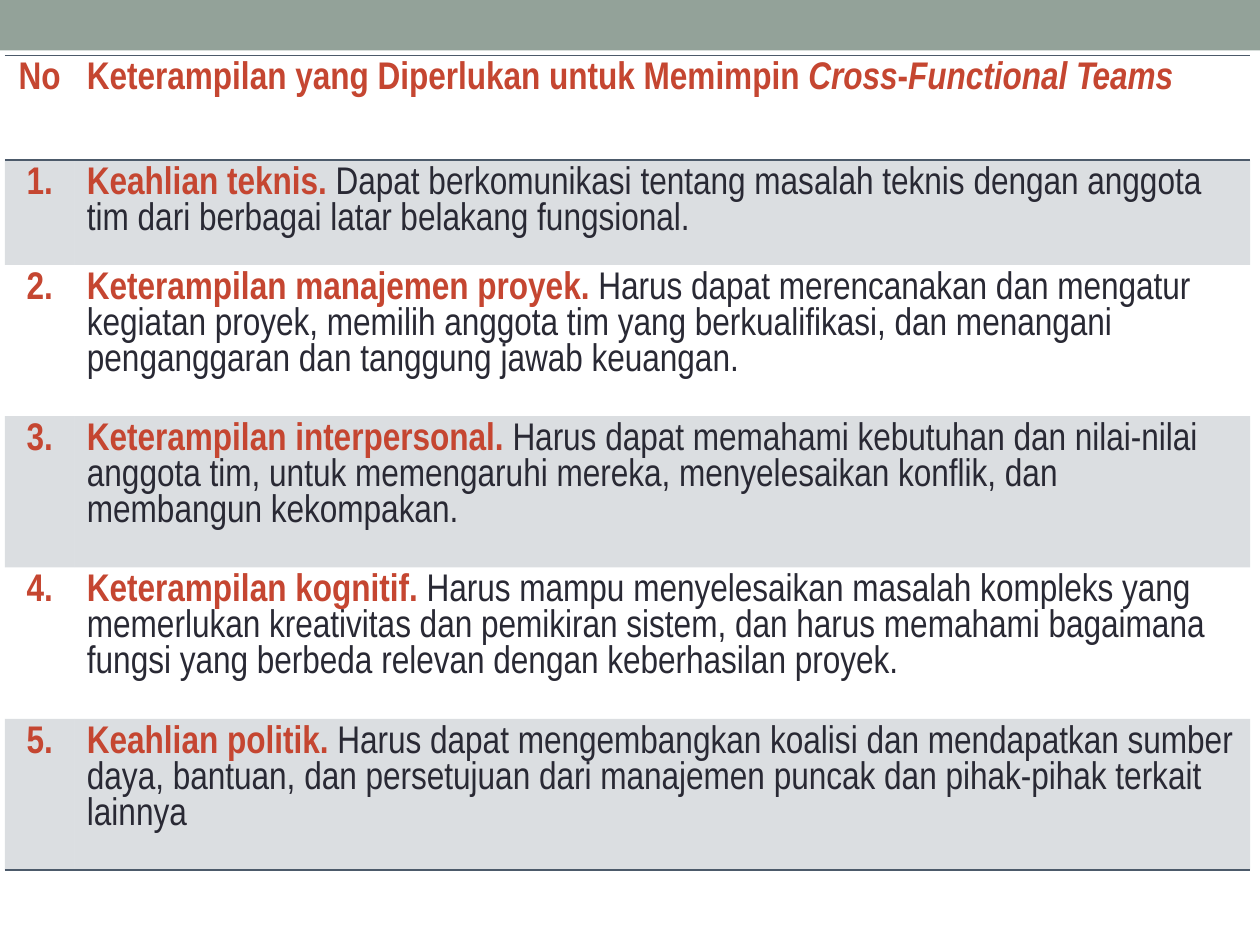
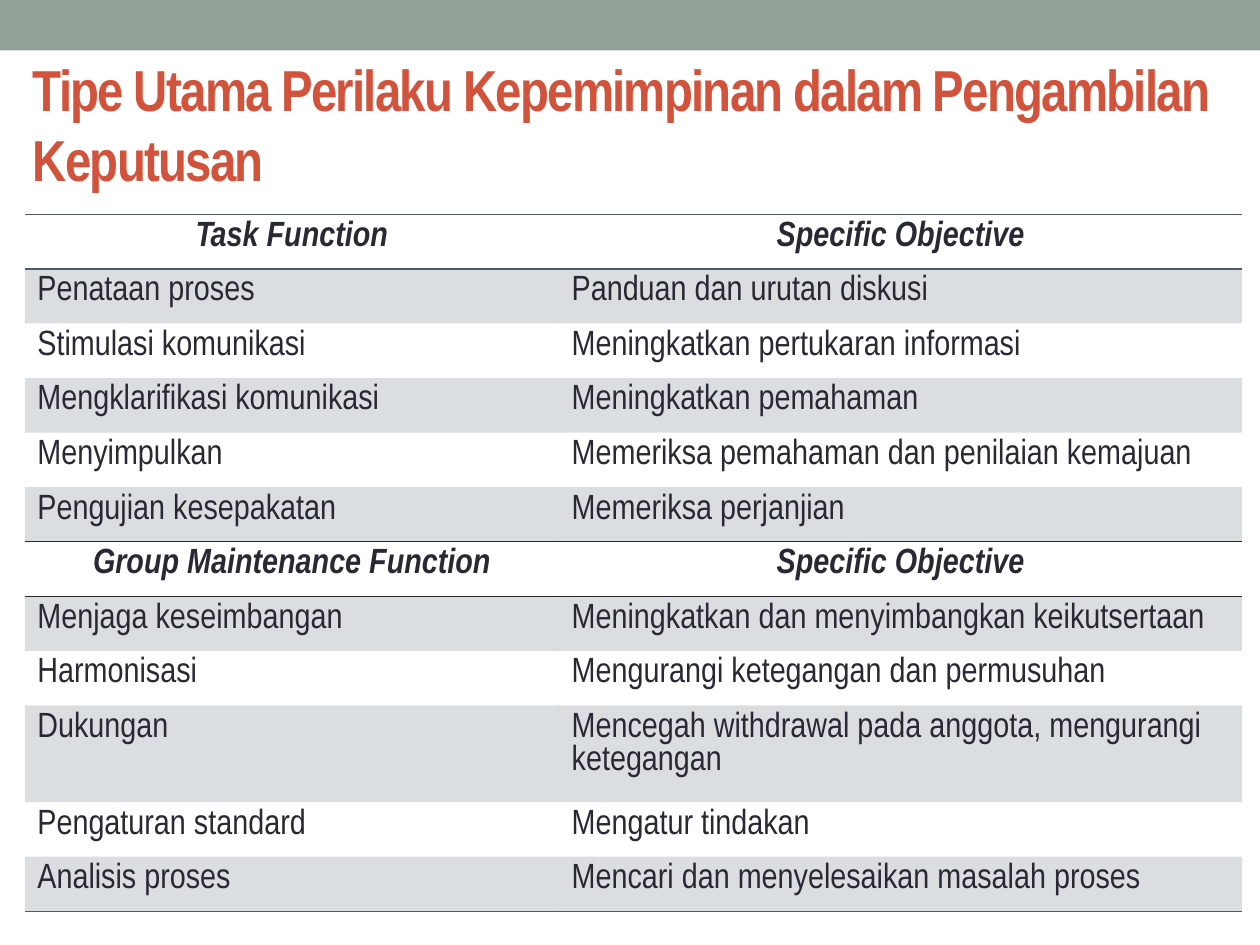
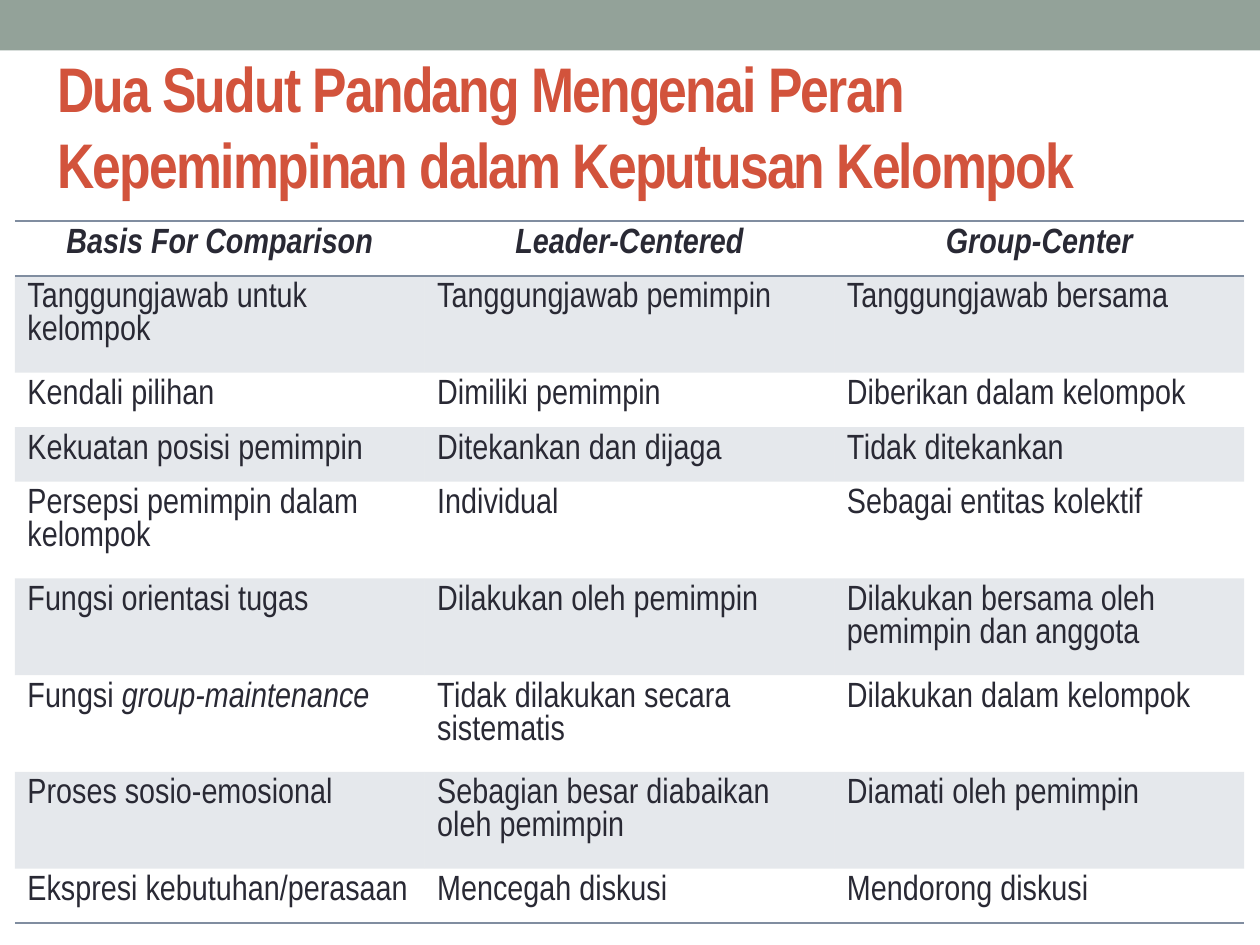
from dataclasses import dataclass

from lxml import etree
from pptx import Presentation
from pptx.dml.color import RGBColor
from pptx.enum.shapes import MSO_SHAPE
from pptx.enum.text import MSO_ANCHOR, PP_ALIGN
from pptx.oxml.ns import qn
from pptx.util import Cm, Pt

RECTANGLE = MSO_SHAPE.RECTANGLE
MIDDLE = MSO_ANCHOR.MIDDLE
LEFT = PP_ALIGN.LEFT
CENTER = PP_ALIGN.CENTER
TITLE_ONLY, BLANK = 5, 6
NO_TABLE_STYLE = "{2D5ABB26-0587-4C30-8999-92F81FD0307C}"


@dataclass(frozen=True)
class Theme:
    font: str = "Arial Narrow"
    band: str = "93A299"
    title: str = "D2533C"
    accent: str = "C54631"
    ink: str = "292934"
    slate: str = "4C5A6A"
    steel: str = "808DA0"
    tint_percent: int = 20
    skill_size: int = 22
    table_size: int = 20
    rule_width: int = 1


THEME = Theme()


@dataclass(frozen=True)
class Span:
    text: str
    colour: str = THEME.ink
    bold: bool = False
    italic: bool = False


@dataclass(frozen=True)
class Cell:
    spans: tuple
    alignment: object = LEFT


def heading(text):
    return Cell((Span(text, bold=True, italic=True),), CENTER)


def accent(text, italic=False):
    return Span(text, THEME.accent, True, italic)


def number(text):
    return Cell((accent(text),), CENTER)


class Deck:
    def __init__(self, theme):
        self.theme = theme
        self.presentation = Presentation()
        self.presentation.slide_width = Cm(25.4)
        self.presentation.slide_height = Cm(19.05)
        self.slide = None

    def add_slide(self, layout_index):
        layout = self.presentation.slide_layouts[layout_index]
        self.slide = self.presentation.slides.add_slide(layout)

    def add_master_band(self):
        band = self.slide.shapes.add_shape(RECTANGLE, 0, 0, Cm(25.4), Cm(1.02))
        band.shadow.inherit = False
        band.fill.solid()
        band.fill.fore_color.rgb = RGBColor.from_string(self.theme.band)
        band.line.fill.background()
        self.presentation.slide_master.shapes.element.insert(2, band.element)

    def format_run(self, run, size, colour, bold, italic=False):
        run.font.name = self.theme.font
        run.font.size = Pt(size)
        run.font.bold = bold
        run.font.italic = italic
        run.font.color.rgb = RGBColor.from_string(colour)

    def add_title(self, text, size, left, top, width, height):
        title = self.slide.shapes.title
        title.left, title.top = Cm(left), Cm(top)
        title.width, title.height = Cm(width), Cm(height)
        title.text_frame.text = text
        title.text_frame.vertical_anchor = MIDDLE
        paragraph = title.text_frame.paragraphs[0]
        paragraph.alignment = LEFT
        run = paragraph.runs[0]
        self.format_run(run, size, self.theme.title, True)
        run.font._element.set("spc", "-100")

    def add_table(self, rows, left, top, widths, heights, size, tint, rules):
        shape = self.slide.shapes.add_table(
            len(rows), len(widths), Cm(left), Cm(top), Cm(sum(widths)), Cm(sum(heights))
        )
        table = shape.table
        table.first_row = table.horz_banding = False
        for style in shape.element.iter(qn("a:tableStyleId")):
            style.text = NO_TABLE_STYLE
        for column, width in zip(table.columns, widths):
            column.width = Cm(width)
        for row_index, (row, height) in enumerate(zip(rows, heights)):
            table.rows[row_index].height = Cm(height)
            for column_index, content in enumerate(row):
                cell = table.cell(row_index, column_index)
                self.fill_cell(cell, tint if row_index % 2 else None)
                self.write_cell(cell, content, size)
                self.add_rule(cell, "a:lnB", rules.get(row_index + 1))
                self.add_rule(cell, "a:lnT", rules.get(row_index))

    def fill_cell(self, cell, tint):
        if tint is None:
            cell.fill.background()
            return
        cell.fill.solid()
        cell.fill.fore_color.rgb = RGBColor.from_string(tint)
        for colour in cell._tc.tcPr.iter(qn("a:srgbClr")):
            alpha = etree.SubElement(colour, qn("a:alpha"))
            alpha.set("val", str(self.theme.tint_percent * 1000))

    def write_cell(self, cell, content, size):
        if isinstance(content, str):
            content = Cell((Span(content),))
        paragraph = cell.text_frame.paragraphs[0]
        paragraph.alignment = content.alignment
        for span in content.spans:
            run = paragraph.add_run()
            run.text = span.text
            self.format_run(run, size, span.colour, span.bold, span.italic)

    def add_rule(self, cell, tag, colour):
        line = etree.Element(qn(tag), w=str(Pt(self.theme.rule_width)))
        if colour is None:
            etree.SubElement(line, qn("a:noFill"))
        else:
            fill = etree.SubElement(line, qn("a:solidFill"))
            etree.SubElement(fill, qn("a:srgbClr"), val=colour)
        cell._tc.tcPr.insert(0, line)


SKILLS = [
    ("Keahlian teknis. ",
     "Dapat berkomunikasi tentang masalah teknis dengan anggota tim dari berbagai "
     "latar belakang fungsional."),
    ("Keterampilan manajemen proyek. ",
     "Harus dapat merencanakan dan mengatur kegiatan proyek, memilih anggota tim yang "
     "berkualifikasi, dan menangani penganggaran dan tanggung jawab keuangan."),
    ("Keterampilan interpersonal. ",
     "Harus dapat memahami kebutuhan dan nilai-nilai anggota tim, untuk memengaruhi "
     "mereka, menyelesaikan konflik, dan membangun kekompakan."),
    ("Keterampilan kognitif. ",
     "Harus mampu menyelesaikan masalah kompleks yang memerlukan kreativitas dan "
     "pemikiran sistem, dan harus memahami bagaimana fungsi yang berbeda relevan "
     "dengan keberhasilan proyek."),
    ("Keahlian politik. ",
     "Harus dapat mengembangkan koalisi dan mendapatkan sumber daya, bantuan, dan "
     "persetujuan dari manajemen puncak dan pihak-pihak terkait lainnya"),
]

BEHAVIOURS = [
    (heading("Task Function"), heading("Specific Objective")),
    ("Penataan proses", "Panduan dan urutan diskusi"),
    ("Stimulasi komunikasi", "Meningkatkan pertukaran informasi"),
    ("Mengklarifikasi komunikasi", "Meningkatkan pemahaman"),
    ("Menyimpulkan", "Memeriksa pemahaman dan penilaian kemajuan"),
    ("Pengujian kesepakatan", "Memeriksa perjanjian"),
    (heading("Group Maintenance Function"), heading("Specific Objective")),
    ("Menjaga keseimbangan", "Meningkatkan dan menyimbangkan keikutsertaan"),
    ("Harmonisasi", "Mengurangi ketegangan dan permusuhan"),
    ("Dukungan", "Mencegah withdrawal pada anggota, mengurangi ketegangan"),
    ("Pengaturan standard", "Mengatur tindakan"),
    ("Analisis proses", "Mencari dan menyelesaikan masalah proses"),
]

VIEWPOINTS = [
    (heading("Basis For Comparison"), heading("Leader-Centered"), heading("Group-Center")),
    ("Tanggungjawab untuk kelompok", "Tanggungjawab pemimpin", "Tanggungjawab bersama"),
    ("Kendali pilihan", "Dimiliki pemimpin", "Diberikan dalam kelompok"),
    ("Kekuatan posisi pemimpin", "Ditekankan dan dijaga", "Tidak ditekankan"),
    ("Persepsi pemimpin dalam kelompok", "Individual", "Sebagai entitas kolektif"),
    ("Fungsi orientasi tugas", "Dilakukan oleh pemimpin",
     "Dilakukan bersama oleh pemimpin dan anggota"),
    (Cell((Span("Fungsi "), Span("group-maintenance", italic=True))),
     "Tidak dilakukan secara sistematis", "Dilakukan dalam kelompok"),
    ("Proses sosio-emosional", "Sebagian besar diabaikan oleh pemimpin",
     "Diamati oleh pemimpin"),
    ("Ekspresi kebutuhan/perasaan", "Mencegah diskusi", "Mendorong diskusi"),
]

ONE_LINE, TWO_LINES = 1.1, 1.95


def row_heights(row_count, tall_rows):
    return [TWO_LINES if index in tall_rows else ONE_LINE for index in range(row_count)]


def build_skills(deck):
    header = Cell((
        accent("Keterampilan yang Diperlukan untuk Memimpin "),
        accent("Cross", True), accent("-"), accent("Functional Teams", True),
    ))
    rows = [(number("No"), header)]
    for position, (skill, description) in enumerate(SKILLS, 1):
        rows.append((number(f"{position}."), Cell((accent(skill), Span(description)))))
    slate = deck.theme.slate
    deck.add_table(rows, 0.1, 1.12, [1.4, 23.7], [2.11] * 2 + [3.05] * 4,
                   deck.theme.skill_size, slate, {0: slate, 1: slate, 6: slate})


def build_behaviours(deck):
    deck.add_title("Tipe Utama Perilaku Kepemimpinan dalam Pengambilan Keputusan",
                   33, 0.41, 1.12, 24.69, 2.74)
    slate, ink = deck.theme.slate, deck.theme.ink
    deck.add_table(BEHAVIOURS, 0.5, 4.32, [10.77, 13.77],
                   row_heights(len(BEHAVIOURS), {9}), deck.theme.table_size, slate,
                   {0: slate, 1: slate, 6: ink, 7: ink, 12: slate})


def build_viewpoints(deck):
    deck.add_title("Dua Sudut Pandang Mengenai Peran Kepemimpinan dalam Keputusan Kelompok",
                   36, 0.9, 0.53, 24.13, 3.99)
    steel = deck.theme.steel
    deck.add_table(VIEWPOINTS, 0.3, 4.46, [8.26] * 3,
                   row_heights(len(VIEWPOINTS), {1, 4, 5, 6, 7}), deck.theme.table_size,
                   steel, {0: steel, 1: steel, 9: steel})


def main():
    deck = Deck(THEME)
    deck.add_slide(BLANK)
    deck.add_master_band()
    build_skills(deck)
    deck.add_slide(TITLE_ONLY)
    build_behaviours(deck)
    deck.add_slide(TITLE_ONLY)
    build_viewpoints(deck)
    deck.presentation.save("out.pptx")


if __name__ == "__main__":
    main()
